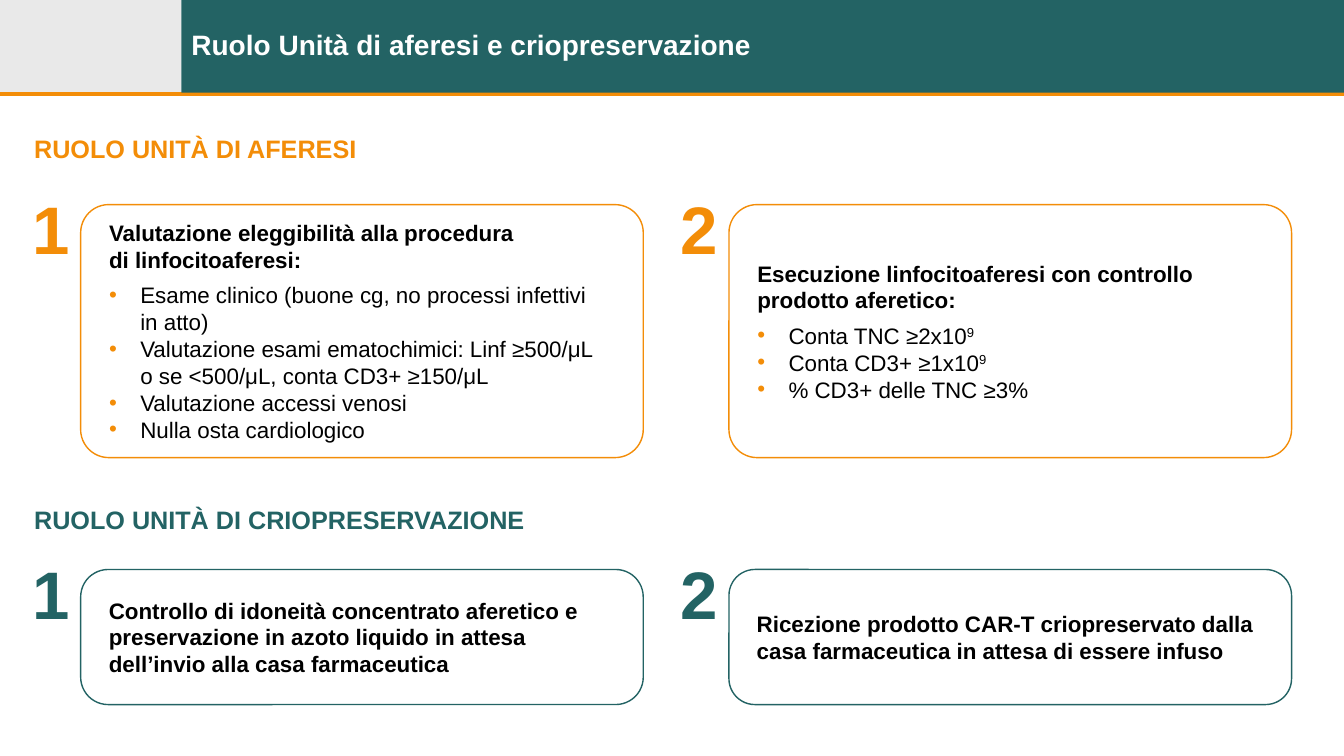
from lxml import etree
from pptx import Presentation, util as u
from pptx.dml.color import RGBColor
from pptx.enum import shapes, text
from pptx.oxml import ns

ORANGE = RGBColor(0xF3, 0x8D, 0x08)
TEAL = RGBColor(0x23, 0x63, 0x64)
GREY = RGBColor(0xE9, 0xE9, 0xE9)
BLACK = RGBColor(0, 0, 0)
WHITE = RGBColor(255, 255, 255)

# Content: "^" marks what follows as superscript
TITLE = "Ruolo Unità di aferesi e criopreservazione"
UNITS = [
    {"heading": "RUOLO UNITÀ DI AFERESI", "color": ORANGE,
     "heading_top": 1.27, "heading_width": 3.43, "card_top": 2.03, "card_height": 2.51,
     "steps": [
         (0.111, "Valutazione eleggibilità alla procedura\ndi linfocitoaferesi:",
          ["Esame clinico (buone cg, no processi infettivi\nin atto)",
           "Valutazione esami ematochimici: Linf ≥500/μL\no se <500/μL, conta CD3+ ≥150/μL",
           "Valutazione accessi venosi",
           "Nulla osta cardiologico"]),
         (0.111, "Esecuzione linfocitoaferesi con controllo prodotto aferetico:",
          ["Conta TNC ≥2x10^9", "Conta CD3+ ≥1x10^9", "% CD3+ delle TNC ≥3%"]),
     ]},
    {"heading": "RUOLO UNITÀ DI CRIOPRESERVAZIONE", "color": TEAL,
     "heading_top": 4.95, "heading_width": 5.1, "card_top": 5.65, "card_height": 1.34,
     "steps": [
         (0.203, "Controllo di idoneità concentrato aferetico e preservazione "
                 "in azoto liquido in attesa dell’invio alla casa farmaceutica", []),
         (0.192, "Ricezione prodotto CAR-T criopreservato dalla casa farmaceutica "
                 "in attesa di essere infuso", []),
     ]},
]

# Layout, in inches
WIDTH, HEIGHT = 13.33, 7.5
BAND_HEIGHT, BAND_LEFT = 0.92, 1.8
CARD_LEFT, CARD_WIDTH, COLUMN_STEP = 0.8, 5.58, 6.43
NUMBER_WIDTH, NUMBER_HEIGHT, NUMBER_RISE = 0.68, 0.91, 0.22
BULLET_INDENT = u.Inches(0.31)

deck = Presentation()
deck.slide_width, deck.slide_height = u.Inches(WIDTH), u.Inches(HEIGHT)
slide = deck.slides.add_slide(deck.slide_layouts[6])


def inches(*lengths):
    return [u.Inches(length) for length in lengths]


def write(paragraph, words, size, color, bold=True):
    base, _, raised = words.partition("^")
    paragraph.text = base
    if raised:
        exponent = paragraph.add_run()
        exponent.text = raised
        exponent._r.get_or_add_rPr().set("baseline", "30000")
    for run in paragraph.runs:
        run.font.name, run.font.size, run.font.bold = "Arial", u.Pt(size), bold
        run.font.color.rgb = color
    for line_break in paragraph._p.findall(ns.qn("a:br")):
        etree.SubElement(line_break, ns.qn("a:rPr")).set("sz", str(size * 100))


def add_label(box, words, size, color, wrap=True):
    frame = slide.shapes.add_textbox(*inches(*box)).text_frame
    frame.word_wrap = wrap
    write(frame.paragraphs[0], words, size, color)
    return frame


def add_band(left, width, color):
    band = slide.shapes.add_shape(shapes.MSO_SHAPE.RECTANGLE, *inches(left, 0, width, BAND_HEIGHT))
    band.shadow.inherit = False
    band.fill.solid()
    band.fill.fore_color.rgb = color
    band.line.fill.background()


def add_bullet(paragraph, color):
    properties = paragraph._p.get_or_add_pPr()
    properties.set("marL", str(BULLET_INDENT))
    properties.set("indent", str(-BULLET_INDENT))
    tint = etree.SubElement(properties, ns.qn("a:buClr"))
    etree.SubElement(tint, ns.qn("a:srgbClr")).set("val", str(color))
    etree.SubElement(properties, ns.qn("a:buFont")).set("typeface", "Arial")
    etree.SubElement(properties, ns.qn("a:buChar")).set("char", "•")


def add_card(box, rounding, lead, points, color):
    card = slide.shapes.add_shape(shapes.MSO_SHAPE.ROUNDED_RECTANGLE, *inches(*box))
    card.adjustments[0] = rounding
    card.shadow.inherit = False
    card.fill.background()
    card.line.color.rgb, card.line.width = color, u.Pt(1)
    frame = card.text_frame
    frame.word_wrap = True
    frame.vertical_anchor = text.MSO_ANCHOR.MIDDLE
    frame.margin_left = u.Inches(0.2)
    write(frame.paragraphs[0], lead, 16, BLACK)
    for index, point in enumerate(points):
        paragraph = frame.add_paragraph()
        add_bullet(paragraph, color)
        paragraph.space_before = u.Pt(0 if index else 6)
        write(paragraph, point, 16, BLACK, bold=False)
    for paragraph in frame.paragraphs:
        paragraph.alignment = text.PP_ALIGN.LEFT


# Header: grey corner, orange rule, teal band with the title
add_band(0, BAND_LEFT, GREY)
rule = slide.shapes.add_connector(shapes.MSO_CONNECTOR.STRAIGHT, *inches(0, 0.93, WIDTH, 0.93))
rule.line.color.rgb, rule.line.width = ORANGE, u.Pt(3)
etree.SubElement(rule._element.spPr, ns.qn("a:effectLst"))
add_band(BAND_LEFT, WIDTH - BAND_LEFT, TEAL)
title = add_label((BAND_LEFT, 0, WIDTH - BAND_LEFT, BAND_HEIGHT), TITLE, 20, WHITE)
title.vertical_anchor = text.MSO_ANCHOR.MIDDLE
title.paragraphs[0].line_spacing = 0.9

# Units: a heading over a row of numbered cards
for unit in UNITS:
    color, top = unit["color"], unit["card_top"]
    add_label((0.24, unit["heading_top"], unit["heading_width"], 0.4),
              unit["heading"], 18, color, wrap=False)
    for column, (rounding, lead, points) in enumerate(unit["steps"]):
        left = CARD_LEFT + column * COLUMN_STEP
        add_card((left, top, CARD_WIDTH, unit["card_height"]), rounding, lead, points, color)
        number = add_label((left - NUMBER_WIDTH - 0.01, top - NUMBER_RISE,
                            NUMBER_WIDTH, NUMBER_HEIGHT), str(column + 1), 48, color)
        number.paragraphs[0].alignment = text.PP_ALIGN.RIGHT

deck.save("out.pptx")
